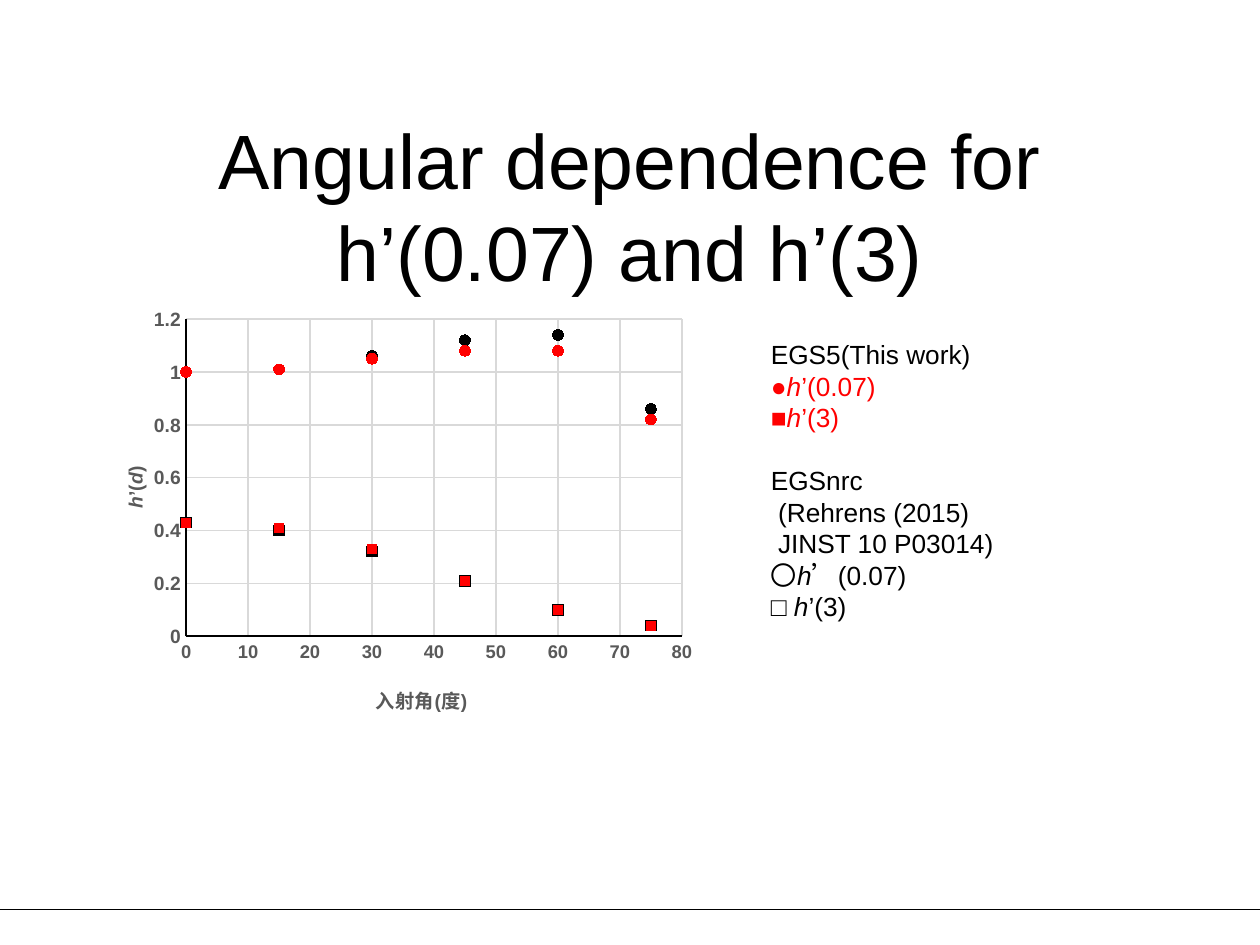
from dataclasses import dataclass

import lxml.etree
import pptx
import pptx.chart.data
import pptx.dml.color
import pptx.enum.chart
import pptx.enum.shapes
import pptx.enum.text
import pptx.oxml.ns
import pptx.util

Pt = pptx.util.Pt
RGBColor = pptx.dml.color.RGBColor
Marker = pptx.enum.chart.XL_MARKER_STYLE
qn = pptx.oxml.ns.qn

BLACK = RGBColor(0, 0, 0)
RED = RGBColor(255, 0, 0)
GRAY = RGBColor(0x59, 0x59, 0x59)
GRID = RGBColor(0xD9, 0xD9, 0xD9)
FACE = "Arial"
ANGLES = (0, 15, 30, 45, 60, 75)


@dataclass
class Dose:
    name: str
    values: tuple
    marker: Marker
    size: int
    color: RGBColor


@dataclass
class Scale:
    maximum: float
    step: float
    label_size: float
    title: tuple
    title_x: float
    title_y: float
    rotation: int


@dataclass
class KeyLine:
    wording: tuple
    color: RGBColor = BLACK
    gap: float = 0


DOSES = (
    Dose("Series 1", (1, 1.01, 1.05, 1.08, 1.08, 0.82), Marker.CIRCLE, 6, RED),
    Dose("Series 2", (1, 1.01, 1.06, 1.12, 1.14, 0.86), Marker.CIRCLE, 6, BLACK),
    Dose("Series 3", (0.43, 0.41, 0.33, 0.21, 0.1, 0.04), Marker.SQUARE, 5, RED),
    Dose("Series 4", (0.43, 0.4, 0.32, 0.21, 0.1, 0.04), Marker.SQUARE, 6, BLACK),
)
ANGLE_SCALE = Scale(80, 10, 10.5, ("入射角(度)",), 0.46, 0.88, 0)
DOSE_SCALE = Scale(1.2, 0.2, 11, ("", "h", "’(", "d", ")"), 0.05, 0.38, -5400000)
KEY = (
    KeyLine(("EGS5(This work)",)),
    KeyLine(("●", "h", "’(0.07)"), RED),
    KeyLine(("■", "h", "’(3)"), RED),
    KeyLine(("EGSnrc",), gap=18),
    KeyLine((" (Rehrens (2015)",)),
    KeyLine((" JINST 10 P03014)",)),
    KeyLine(("〇", "h", "’(0.07)")),
    KeyLine(("□", " h", "’(3)")),
)


def set_font(font, size: float, color: RGBColor, bold: bool = False) -> None:
    font.name = FACE
    font.size = Pt(size)
    font.color.rgb = color
    font.bold = bold


def add_wording(paragraph, wording: tuple) -> None:
    for position, text in enumerate(wording):
        if text:
            run = paragraph.add_run()
            run.text = text
            if position % 2:
                run.font.italic = True


def place(parent, index: int, inner: bool, **fractions: float) -> None:
    for old in parent.findall(qn("c:layout")):
        parent.remove(old)
    layout = lxml.etree.Element(qn("c:layout"))
    manual = lxml.etree.SubElement(layout, qn("c:manualLayout"))
    settings = {"layoutTarget": "inner"} if inner else {}
    settings |= {"xMode": "edge", "yMode": "edge"}
    settings |= fractions
    for tag, value in settings.items():
        lxml.etree.SubElement(manual, qn(f"c:{tag}")).set("val", str(value))
    parent.insert(index, layout)


def style_axis(axis, scale: Scale) -> None:
    axis.minimum_scale = 0
    axis.maximum_scale = scale.maximum
    axis.major_unit = scale.step
    axis.major_tick_mark = pptx.enum.chart.XL_TICK_MARK.NONE
    axis.minor_tick_mark = pptx.enum.chart.XL_TICK_MARK.NONE
    axis.has_major_gridlines = True
    for line, color, width in (
        (axis.format.line, BLACK, 1),
        (axis.major_gridlines.format.line, GRID, 0.75),
    ):
        line.color.rgb = color
        line.width = Pt(width)
    axis.tick_labels.number_format = "General"
    axis.tick_labels.number_format_is_linked = False
    set_font(axis.tick_labels.font, scale.label_size, GRAY, True)
    frame = axis.axis_title.text_frame
    set_font(frame.paragraphs[0].font, 11, GRAY, True)
    add_wording(frame.paragraphs[0], scale.title)
    body = frame._txBody.find(qn("a:bodyPr"))
    body.set("rot", str(scale.rotation))
    body.set("vert", "horz")
    place(axis.axis_title._element, 1, False, x=scale.title_x, y=scale.title_y)


def add_dose_chart(slide) -> None:
    data = pptx.chart.data.XyChartData()
    for dose in DOSES:
        points = data.add_series(dose.name)
        for angle, value in zip(ANGLES, dose.values):
            points.add_data_point(angle, value)
    chart = slide.shapes.add_chart(
        pptx.enum.chart.XL_CHART_TYPE.XY_SCATTER,
        Pt(49.7), Pt(170), Pt(354.2), Pt(248.4), data,
    ).chart
    chart.has_legend = False
    chart.has_title = False
    set_font(chart.font, 10, BLACK)
    chart.plots[0].vary_by_categories = False
    for series, dose in zip(chart.plots[0].series, DOSES):
        series.smooth = False
        series.format.line.fill.background()
        series.marker.style = dose.marker
        series.marker.size = dose.size
        series.marker.format.fill.solid()
        series.marker.format.fill.fore_color.rgb = dose.color
        series.marker.format.line.color.rgb = dose.color
    style_axis(chart.category_axis, ANGLE_SCALE)
    style_axis(chart.value_axis, DOSE_SCALE)
    plot_area = chart._chartSpace.chart.plotArea
    place(plot_area, 0, True, x=0.16, y=0.05, w=0.8, h=0.73)


def add_frame(slide, left: float, top: float, width: float, height: float):
    frame = slide.shapes.add_textbox(Pt(left), Pt(top), Pt(width), Pt(height)).text_frame
    frame.word_wrap = True
    return frame


def add_title(slide) -> None:
    frame = add_frame(slide, 49.7, 89.3, 620.6, 55.4)
    frame.vertical_anchor = pptx.enum.text.MSO_ANCHOR.MIDDLE
    heading = frame.paragraphs[0]
    heading.text = "Angular dependence for h’(0.07) and h’(3)"
    heading.alignment = pptx.enum.text.PP_ALIGN.CENTER
    set_font(heading.font, 44, BLACK)


def add_key(slide) -> None:
    frame = add_frame(slide, 433.4, 190, 212.4, 170.6)
    for position, entry in enumerate(KEY):
        line = frame.add_paragraph() if position else frame.paragraphs[0]
        line.line_spacing = Pt(18)
        if entry.gap:
            line.space_before = Pt(entry.gap)
        set_font(line.font, 15, entry.color)
        add_wording(line, entry.wording)


def add_footer_rule(slide) -> None:
    rule = slide.shapes.add_connector(
        pptx.enum.shapes.MSO_CONNECTOR.STRAIGHT, Pt(0), Pt(519.8), Pt(720), Pt(519.8)
    )
    rule.line.color.rgb = BLACK
    rule.line.width = Pt(0.75)
    lxml.etree.SubElement(rule._element.spPr, qn("a:effectLst"))


def main() -> None:
    deck = pptx.Presentation()
    deck.slide_width = Pt(720)
    deck.slide_height = Pt(540)
    slide = deck.slides.add_slide(deck.slide_layouts[6])
    add_footer_rule(slide)
    add_title(slide)
    add_dose_chart(slide)
    add_key(slide)
    deck.save("out.pptx")


if __name__ == "__main__":
    main()
